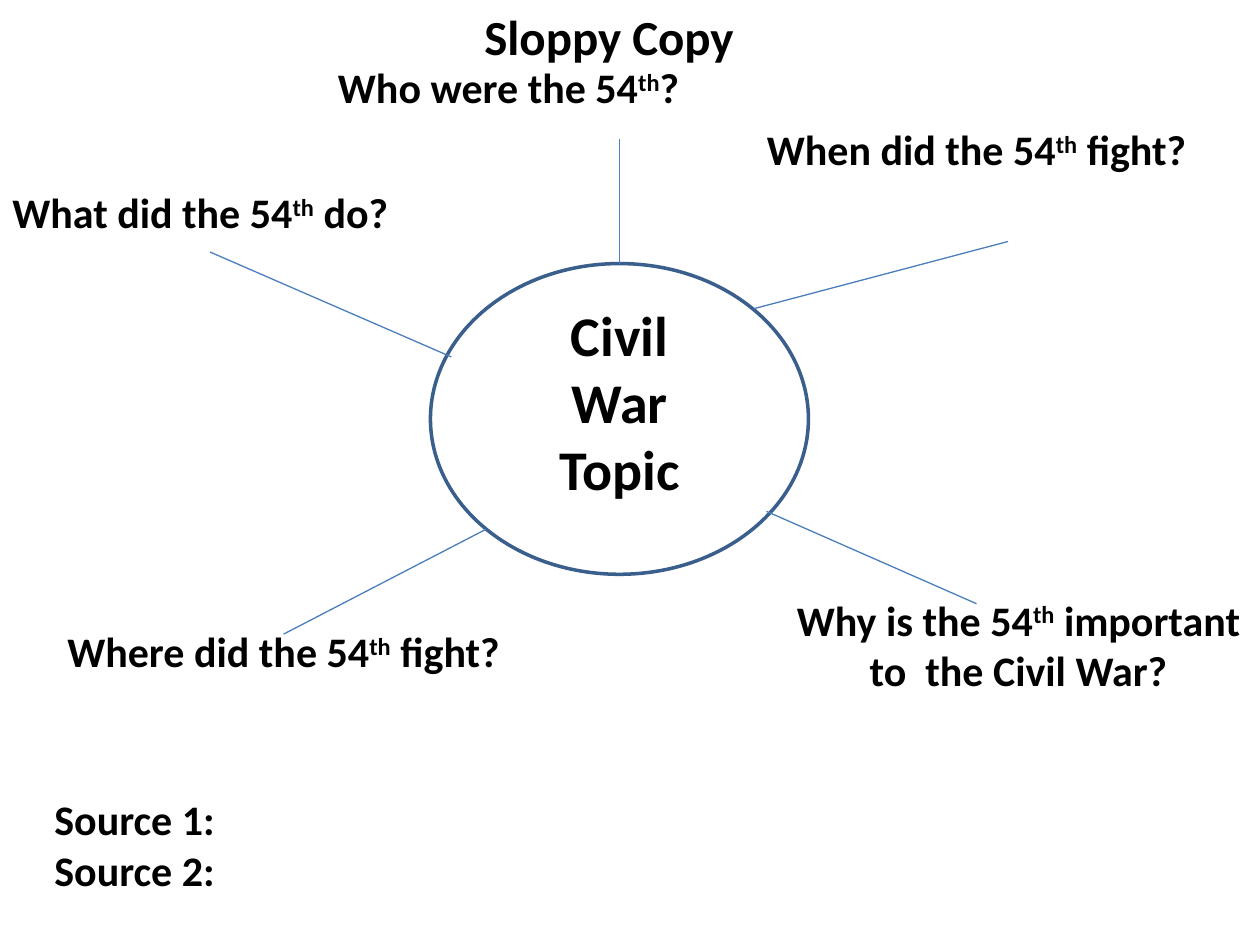
from pptx import Presentation
from pptx.util import Inches, Pt
from pptx.dml.color import RGBColor
from pptx.enum.shapes import MSO_SHAPE, MSO_CONNECTOR
from pptx.enum.text import PP_ALIGN, MSO_ANCHOR
from lxml.etree import SubElement
from pptx.oxml.ns import qn

HUES = {"ink": "000000", "paper": "FFFFFF", "ring": "3A5F8C", "spoke": "4B7EBC"}
HUES = {name: RGBColor.from_string(code) for name, code in HUES.items()}
LEFT, MID = PP_ALIGN.LEFT, PP_ALIGN.CENTER

deck = Presentation()
deck.slide_width, deck.slide_height = Inches(10), Inches(7.5)
unit = deck.slide_width / 120
slide = deck.slides.add_slide(deck.slide_layouts[5])


def grid(*cells):
    return [round(cell * unit) for cell in cells]


def write(box, lines, size, align):
    frame = box.text_frame
    frame.word_wrap = True
    frame.vertical_anchor = MSO_ANCHOR.TOP
    for i, line in enumerate(lines):
        para = frame.add_paragraph() if i else frame.paragraphs[0]
        para.alignment = align
        for j, part in enumerate(line.split("^")):
            run = para.add_run()
            run.text = part
            run.font.name, run.font.size, run.font.bold = "Calibri", Pt(size), True
            run.font.color.rgb = HUES["ink"]
            if j == 1:
                run.font._element.set("baseline", "30000")


hub = slide.shapes.add_shape(MSO_SHAPE.OVAL, *grid(41, 25.1, 36, 29.6))
hub.shadow.inherit = False
hub.fill.solid()
hub.fill.fore_color.rgb = HUES["paper"]
hub.line.color.rgb = HUES["ring"]
hub.line.width = Pt(2)

spokes = [
    (71.8, 29.4, 96, 23),
    (27, 60.4, 46.3, 50.4),
    (20, 24, 43, 34),
    (73, 48.7, 93, 57.5),
    (59, 13.2, 59, 25.1),
]
for ends in spokes:
    spoke = slide.shapes.add_connector(MSO_CONNECTOR.STRAIGHT, *grid(*ends))
    spoke.line.color.rgb = HUES["spoke"]
    spoke.line.width = Pt(0.75)
    SubElement(spoke._element.spPr, qn("a:effectLst"))
spoke.end_connect(hub, 0)

texts = [
    ((46.5, 28, 25, 20.4), ["Civil", "War", "Topic"], 32, MID),
    ((31, 5.3, 58, 6), ["Who were the 54^th^?"], 24, LEFT),
    ((0, 17.2, 54, 6), ["What did the 54^th^ do?"], 24, LEFT),
    ((66, 11.2, 54, 6), ["When did the 54^th^ fight?"], 24, MID),
    ((0, 59, 54, 6), ["Where did the 54^th^ fight?"], 24, MID),
    ((74, 56, 46, 10.9), ["Why is the 54^th^ important to  the Civil War?"], 24, MID),
    ((4, 75, 42, 10.9), ["Source 1:", "Source 2:"], 24, LEFT),
]
for place, lines, size, align in texts:
    write(slide.shapes.add_textbox(*grid(*place)), lines, size, align)

title = slide.shapes.title
title.left, title.top, title.width, title.height = grid(30, 0, 56, 6.8)
write(title, ["Sloppy Copy"], 28, MID)

deck.save("out.pptx")
